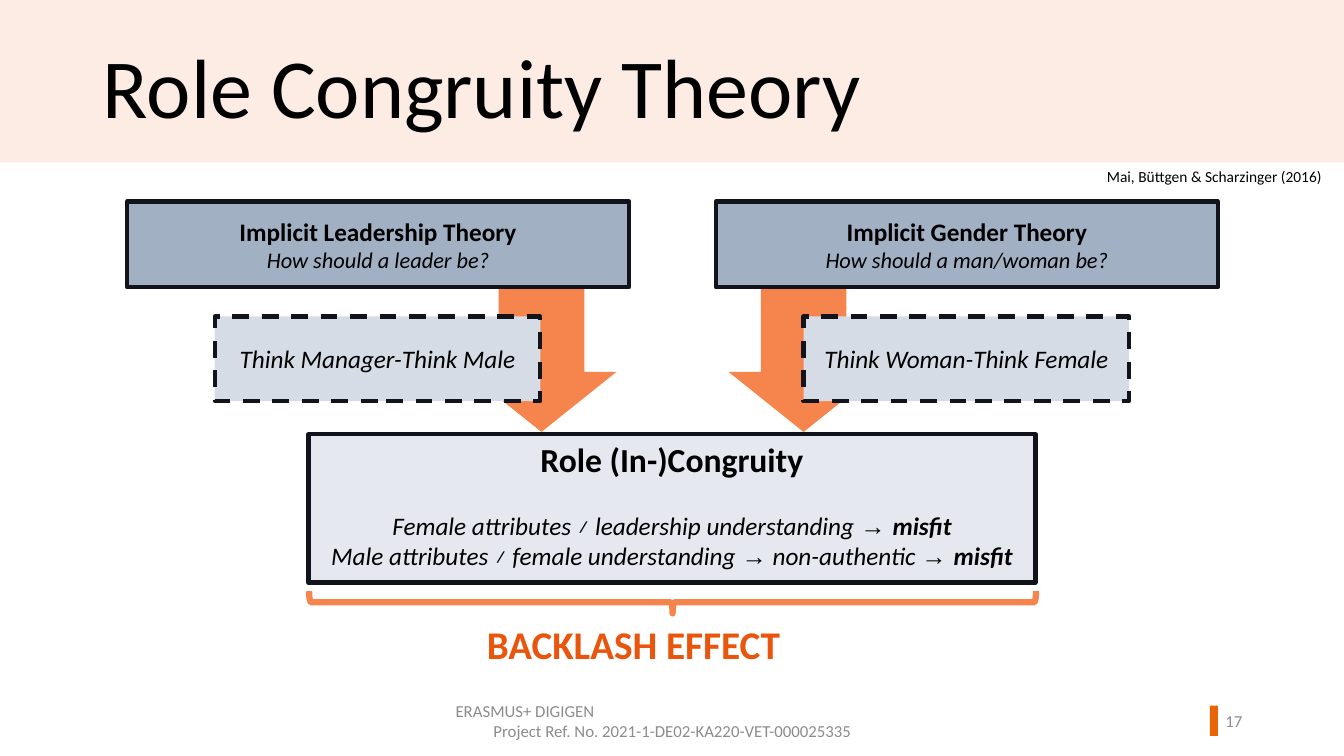
"""Build the Role Congruity Theory slide."""
from pptx import Presentation
from pptx.dml.color import RGBColor
from pptx.enum.dml import MSO_LINE
from pptx.enum.shapes import MSO_SHAPE
from pptx.enum.text import MSO_ANCHOR, MSO_AUTO_SIZE, PP_ALIGN
from pptx.util import Inches, Pt

RECT, ARROW, BRACE = MSO_SHAPE.RECTANGLE, MSO_SHAPE.RIGHT_ARROW, MSO_SHAPE.RIGHT_BRACE
LEFT, MID, RIGHT = PP_ALIGN.LEFT, PP_ALIGN.CENTER, PP_ALIGN.RIGHT
TOP, CENTER = MSO_ANCHOR.TOP, MSO_ANCHOR.MIDDLE
DASH = MSO_LINE.DASH
FIXED = MSO_AUTO_SIZE.NONE

BLACK = RGBColor(0x00, 0x00, 0x00)
NAVY = RGBColor(0x11, 0x15, 0x1B)
STEEL = RGBColor(0xA2, 0xB0, 0xC4)
MIST = RGBColor(0xD6, 0xDC, 0xE5)
PALE = RGBColor(0xE5, 0xE9, 0xEF)
PEACH = RGBColor(0xFD, 0xEC, 0xE3)
CORAL = RGBColor(0xF5, 0x85, 0x4D)
AMBER = RGBColor(0xE8, 0x65, 0x07)
RUST = RGBColor(0xE9, 0x55, 0x0D)
GRAY = RGBColor(0x8C, 0x8C, 0x8C)

deck = Presentation()
deck.slide_width, deck.slide_height = Inches(13.33), Inches(7.5)
slide = deck.slides.add_slide(deck.slide_layouts[5])
shapes = slide.shapes


def draw(kind, box, fill=None, edge=None, width=3):
    shape = shapes.add_shape(kind, *map(Inches, box))
    shape.shadow.inherit = False
    if fill is None:
        shape.fill.background()
    else:
        shape.fill.solid()
        shape.fill.fore_color.rgb = fill
    if edge is None:
        shape.line.fill.background()
    else:
        shape.line.color.rgb = edge
        shape.line.width = Pt(width)
    return shape


def write(shape, rows, color=BLACK, anchor=CENTER, wrap=True):
    frame = shape.text_frame
    frame.word_wrap = wrap
    frame.vertical_anchor = anchor
    for i, (text, size, bold, slant, align) in enumerate(rows):
        para = frame.add_paragraph() if i else frame.paragraphs[0]
        para.text = text
        para.alignment = align
        font = para.font
        font.name, font.size = "Calibri", Pt(size)
        font.bold, font.italic = bold, slant
        font.color.rgb = color
    return frame


band = draw(RECT, (0, 0, 13.33, 1.61), PEACH)
draw(RECT, (12, 7, 0.08, 0.3), AMBER)

title = shapes.title
band.element.addnext(title.element)
title.left, title.top = Inches(0.92), Inches(0.41)
title.width, title.height = Inches(9.93), Inches(0.85)
frame = write(title, [("Role Congruity Theory", 60, False, False, LEFT)], anchor=TOP)
frame.auto_size = FIXED
frame.paragraphs[0].line_spacing = 0.9

for left in (7.26, 4.66):
    arrow = draw(ARROW, (left, 2.83, 1.42, 1.49), CORAL)
    arrow.rotation = 90
    arrow.adjustments[0], arrow.adjustments[1] = 0.57, 0.42

theories = [
    (1.26, "Implicit Leadership Theory", "How should a leader be?", "Think Manager-Think Male"),
    (7.1, "Implicit Gender Theory", "How should a man/woman be?", "Think Woman-Think Female"),
]
for left, name, query, motto in theories:
    head = draw(RECT, (left, 2, 4.98, 0.85), STEEL, NAVY)
    write(head, [(name, 18, True, False, MID), (query, 16, False, True, MID)])
    card = draw(RECT, (left + 0.87, 3.14, 3.23, 0.84), MIST, NAVY)
    card.line.dash_style = DASH
    write(card, [(motto, 18, False, True, MID)])

result = draw(RECT, (3.06, 4.31, 7.21, 1.47), PALE, NAVY)
frame = write(result, [
    ("Role (In-)Congruity", 24, True, False, MID),
    ("", 18, False, True, MID),
    ("", 18, False, True, MID),
], anchor=TOP)
frame.paragraphs[1].space_before = Pt(22)
claims = [
    ("Female attributes ≠ leadership understanding ", "→ ", "misfit"),
    ("Male attributes ≠ female understanding ", "→", " non-authentic ", "→ ", "misfit"),
]
for para, parts in zip(frame.paragraphs[1:], claims):
    for part in parts:
        run = para.add_run()
        run.text = part
        if "→" in part:
            run.font.name = "Arial"
        if part == "misfit":
            run.font.bold = True

brace = draw(BRACE, (6.56, 2.37, 0.22, 7.21), edge=CORAL, width=4.5)
brace.rotation = 90

notes = [
    ((4.73, 6.1, 3.87, 0.57), RUST, TOP, False,
     [("BACKLASH EFFECT", 28, True, False, LEFT)]),
    ((10.88, 1.61, 2.54, 0.29), BLACK, TOP, True,
     [("Mai, Büttgen & Scharzinger (2016)", 11, False, False, LEFT)]),
    ((4.42, 6.95, 4.5, 0.4), GRAY, CENTER, True,
     [("ERASMUS+ DIGIGEN", 12, False, False, LEFT),
      ("Project Ref. No. 2021-1-DE02-KA220-VET-000025335", 12, False, False, MID)]),
    ((11.77, 6.95, 0.65, 0.4), GRAY, CENTER, True,
     [("17", 12, False, False, RIGHT)]),
]
for box, color, anchor, wrap, rows in notes:
    write(shapes.add_textbox(*map(Inches, box)), rows, color, anchor, wrap)

deck.save("out.pptx")
